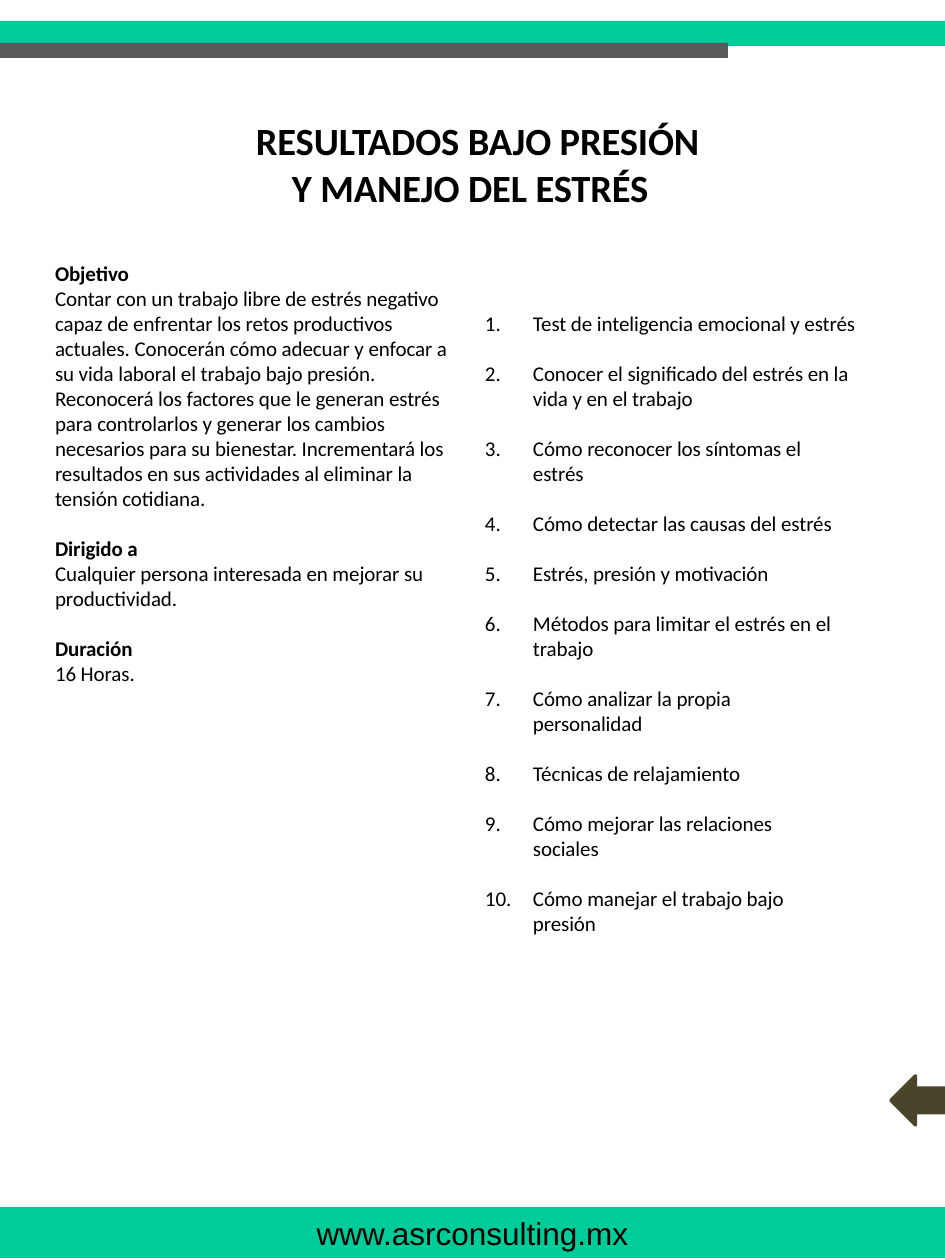
import pptx
import pptx.dml.color
import pptx.enum.shapes
import pptx.enum.text
import pptx.oxml
import pptx.oxml.ns
import pptx.util

PX = 914400 // 126
LINE = 14.3
GREEN, GREY, BROWN, BLACK = "00CC99", "595959", "4A452A", "000000"
SHAPES = pptx.enum.shapes.MSO_SHAPE
ANCHOR = pptx.enum.text.MSO_ANCHOR
ALIGN = pptx.enum.text.PP_ALIGN

SECTIONS = [
    ("Objetivo",
     "Contar con un trabajo libre de estrés negativo capaz de enfrentar los "
     "retos productivos actuales. Conocerán cómo adecuar y enfocar a su vida "
     "laboral el trabajo bajo presión. Reconocerá los factores que le generan "
     "estrés para controlarlos y generar los cambios necesarios para su "
     "bienestar. Incrementará los resultados en sus actividades al eliminar "
     "la tensión cotidiana."),
    ("Dirigido a",
     "Cualquier persona interesada en mejorar su productividad."),
    ("Duración", "16 Horas."),
]
TOPICS = [
    "Test de inteligencia emocional y estrés",
    "Conocer el significado del estrés en la\vvida y en el trabajo",
    "Cómo reconocer los síntomas el\vestrés",
    "Cómo detectar las causas del estrés",
    "Estrés, presión y motivación",
    "Métodos para limitar el estrés en el\vtrabajo",
    "Cómo analizar la propia\vpersonalidad",
    "Técnicas de relajamiento",
    "Cómo mejorar las relaciones\vsociales",
    "Cómo manejar el trabajo bajo\vpresión",
]


def px(length):
    return pptx.util.Emu(length * PX)


def color(value):
    return pptx.dml.color.RGBColor.from_string(value)


def add_block(page, kind, left, top, width, height, fill):
    block = page.shapes.add_shape(kind, px(left), px(top), px(width), px(height))
    block.shadow.inherit = False
    block.fill.solid()
    block.fill.fore_color.rgb = color(fill)
    block.line.fill.background()
    return block


def prepare_frame(box):
    frame = box.text_frame
    frame.word_wrap = True
    frame.margin_left = frame.margin_right = frame.margin_bottom = 0
    frame.margin_top = px(1)
    frame.vertical_anchor = ANCHOR.TOP
    return frame


def add_text_area(page, left, top, width, height):
    box = page.shapes.add_textbox(px(left), px(top), px(width), px(height))
    return prepare_frame(box)


def add_para(frame, first, text):
    para = frame.paragraphs[0] if first else frame.add_paragraph()
    para.text = text
    return para


def set_indent(para, margin, hanging):
    properties = para._p.get_or_add_pPr()
    properties.set("marL", str(px(margin)))
    properties.set("indent", str(px(-hanging)))
    return properties


def format_runs(para, size, bold=False, font="Calibri", spacing=-5):
    for span in para.runs:
        span.font.name = font
        span.font.size = pptx.util.Pt(size)
        span.font.bold = bold
        span.font.color.rgb = color(BLACK)
        span._r.get_or_add_rPr().set("spc", str(spacing))


def draw_header(page, left, top, width):
    add_block(page, SHAPES.RECTANGLE, left, top, width, 25, GREEN)
    add_block(page, SHAPES.RECTANGLE, left, top + 22, 728, 15, GREY)


def draw_title(page, left, top, width, height):
    title = page.shapes.title
    title.left, title.top = px(left), px(top)
    title.width, title.height = px(width), px(height)
    frame = prepare_frame(title)
    frame.auto_size = pptx.enum.text.MSO_AUTO_SIZE.NONE
    para = add_para(frame, True, "RESULTADOS BAJO PRESIÓN\vY MANEJO DEL ESTRÉS")
    set_indent(para, 39, 36)
    para.alignment = ALIGN.LEFT
    para.line_spacing = 1.01
    format_runs(para, 22, bold=True)


def draw_sections(page, left, top, width, height):
    frame = add_text_area(page, left, top, width, height)
    for index, (heading, body) in enumerate(SECTIONS):
        for text, bold in ((heading, True), (body, False)):
            para = add_para(frame, index == 0 and bold, text)
            set_indent(para, 1, 0)
            para.line_spacing = pptx.util.Pt(LINE)
            if bold and index:
                para.space_before = pptx.util.Pt(LINE)
            format_runs(para, 12, bold)


def draw_topics(page, left, top, width, height):
    frame = add_text_area(page, left, top, width, height)
    for index, topic in enumerate(TOPICS):
        para = add_para(frame, index == 0, topic)
        properties = set_indent(para, 49, 48)
        font = pptx.oxml.parse_xml(
            '<a:buFont %s typeface="Calibri"/>' % pptx.oxml.ns.nsdecls("a"))
        number = pptx.oxml.parse_xml(
            '<a:buAutoNum %s type="arabicPeriod"/>' % pptx.oxml.ns.nsdecls("a"))
        properties.extend([font, number])
        para.line_spacing = pptx.util.Pt(LINE)
        if index:
            para.space_before = pptx.util.Pt(LINE)
        format_runs(para, 12)


def draw_footer(page, left, top, width, height):
    bar = add_block(page, SHAPES.RECTANGLE, left, top, width, height, GREEN)
    frame = prepare_frame(bar)
    frame.vertical_anchor = ANCHOR.MIDDLE
    para = add_para(frame, True, "www.asrconsulting.mx")
    para.alignment = ALIGN.CENTER
    format_runs(para, 18, font="Arial", spacing=0)


def draw_arrow(page, left, top, width, height):
    arrow = add_block(page, SHAPES.LEFT_ARROW, left, top, width, height, BROWN)
    arrow.line.color.rgb = color(BROWN)
    arrow.line.width = pptx.util.Pt(2)


def main():
    deck = pptx.Presentation()
    deck.slide_width, deck.slide_height = px(945), px(1260)
    page = deck.slides.add_slide(deck.slide_layouts[5])
    # Heading and the two text columns
    draw_title(page, 253, 116, 456, 97)
    draw_sections(page, 54, 260, 400, 432)
    draw_topics(page, 484, 310, 379, 533)
    # Coloured bars and the back arrow
    draw_footer(page, 0, 1207, 945, 51)
    draw_header(page, 0, 21, 945)
    draw_arrow(page, 891, 1076, 54, 49)
    deck.save("out.pptx")


if __name__ == "__main__":
    main()
